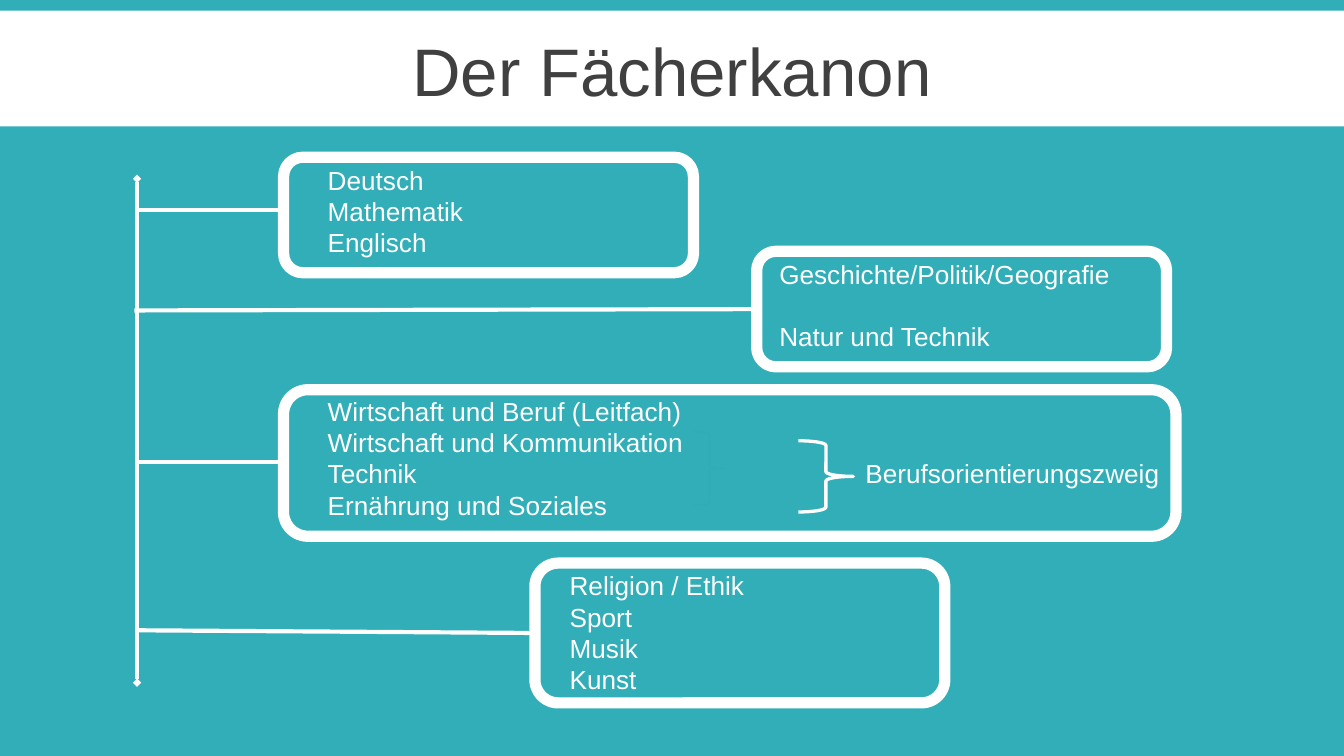
from lxml.etree import SubElement
from pptx import Presentation
from pptx.dml.color import RGBColor
from pptx.enum.shapes import MSO_CONNECTOR as Connector, MSO_SHAPE as Shape
from pptx.enum.text import MSO_ANCHOR as Anchor, PP_ALIGN as Align
from pptx.oxml.ns import qn
from pptx.util import Inches, Pt

TEAL, WHITE, GREY = "32AEB8", "FFFFFF", "404040"
color_of = RGBColor.from_string

deck = Presentation()
deck.slide_width = Inches(10)
deck.slide_height = Inches(10 * 9 / 16)
page = deck.slides.add_slide(deck.slide_layouts[5])


def write(frame, text, size=14, color=WHITE, align=Align.LEFT, anchor=Anchor.TOP, gap=0, tab=None):
    frame.word_wrap = True
    frame.vertical_anchor = anchor
    frame.text = text
    for para in frame.paragraphs:
        para.alignment = align
        para.space_after = Pt(gap)
        if tab:
            stops = SubElement(para._p.get_or_add_pPr(), qn("a:tabLst"))
            SubElement(stops, qn("a:tab"), pos=str(Inches(tab)), algn="l")
        for span in para.runs:
            span.font.name = "Arial"
            span.font.size = Pt(size)
            span.font.color.rgb = color_of(color)


def draw(kind, place, fill=None, line=None, width=1):
    shape = page.shapes.add_shape(kind, *map(Inches, place))
    shape.shadow.inherit = False
    if fill:
        shape.fill.solid()
        shape.fill.fore_color.rgb = color_of(fill)
    else:
        shape.fill.background()
    if line:
        shape.line.color.rgb = color_of(line)
        shape.line.width = Pt(width)
    else:
        shape.line.fill.background()


title = page.shapes.title
title.left, title.top, title.width, title.height = map(Inches, (0, 0, 10, 1.04))
write(title.text_frame, "Der Fächerkanon", size=36, color=GREY, align=Align.CENTER, anchor=Anchor.MIDDLE)

for top, height in [(5.43, 0.2), (0, 0.08), (0.94, 4.61)]:
    draw(Shape.RECTANGLE, (0, top, 10, height), fill=TEAL)

subject_groups = [
    ((5.63, 1.87, 3.05, 0.86), (5.7, 1.87, 2.97, 0.81),
     ["Geschichte/Politik/Geografie", "Natur und Technik"], {"gap": 16.8}),
    ((2.11, 1.17, 3.05, 0.86), (2.34, 1.17, 1.8, 0.81),
     ["Deutsch", "Mathematik", "Englisch"], {}),
    ((2.11, 2.9, 6.64, 1.09), (2.34, 2.89, 7.19, 1.04),
     ["Wirtschaft und Beruf (Leitfach)", "Wirtschaft und Kommunikation",
      "Technik\tBerufsorientierungszweig", "Ernährung und Soziales"], {"tab": 4}),
    ((3.98, 4.19, 3.05, 1.04), (4.14, 4.19, 3.13, 1.04),
     ["Religion / Ethik", "Sport", "Musik", "Kunst"], {}),
]
for frame_place, text_place, subjects, text_format in subject_groups:
    draw(Shape.ROUNDED_RECTANGLE, frame_place, fill=TEAL, line=WHITE, width=6)
    box = page.shapes.add_textbox(*map(Inches, text_place))
    write(box.text_frame, "\n".join(subjects), **text_format)

spine = (1.02, 1.33, 1.02, 5.08)
branches = [
    (1.02, 1.56, 2.11, 1.56),
    (1.02, 3.44, 2.11, 3.44),
    (1.02, 4.69, 3.98, 4.71),
    (1, 2.31, 5.63, 2.3),
]
for ends in [spine, *branches]:
    connector = page.shapes.add_connector(Connector.STRAIGHT, *map(Inches, ends))
    connector.line.color.rgb = color_of(WHITE)
    connector.line.width = Pt(2.25)
    if ends == spine:
        for end in ("a:headEnd", "a:tailEnd"):
            SubElement(connector.line._get_or_add_ln(), qn(end), type="diamond", w="sm", len="sm")
    SubElement(connector._element.spPr, qn("a:effectLst"))

draw(Shape.RIGHT_BRACE, (5.16, 3.21, 0.24, 0.55), line="2EADB7", width=0.75)
draw(Shape.RIGHT_BRACE, (5.94, 3.28, 0.41, 0.53), line=WHITE, width=1.75)

deck.save("out.pptx")
